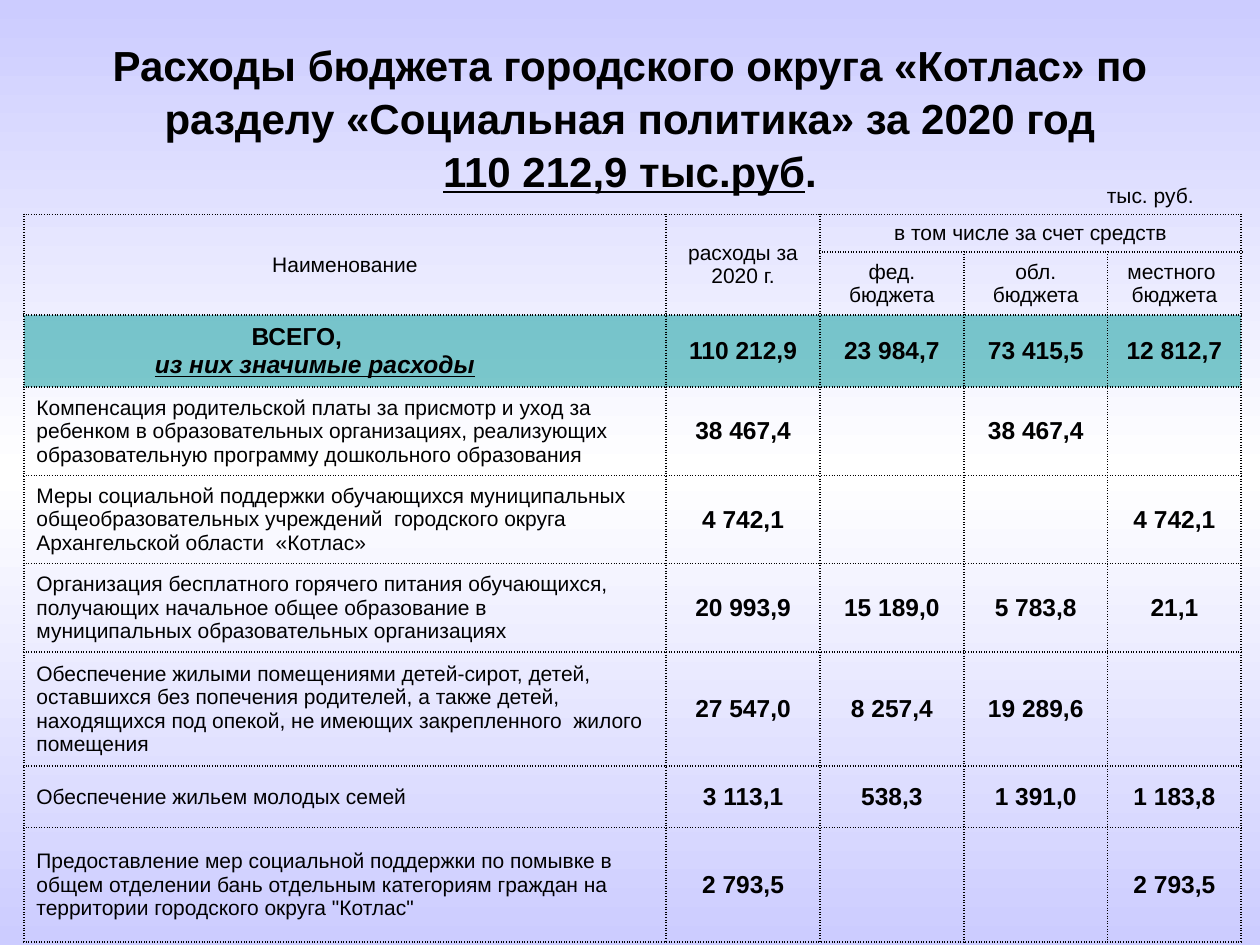
from lxml import etree
from pptx import Presentation
from pptx.dml.color import RGBColor
from pptx.enum import text
from pptx.oxml.ns import qn
from pptx.util import Cm, Pt

THEME = {
    "font": "Arial", "ink": "000000", "total": "009999", "alpha": 50,
    "sky": [(0, "CCCCFF"), (50, "FFFFFF"), (100, "CCCCFF")],
    "head": {"size": Pt(24), "bold": True},
    "body": {"size": Pt(12), "bold": False},
    "sum": {"size": Pt(14), "bold": True},
    "line": Pt(1), "dash": "sysDot",
}
LEFT, MID = text.PP_ALIGN.LEFT, text.PP_ALIGN.CENTER
ROLE = {"underline": {"underline": True},
        "stress": {"underline": True, "italic": True}}

TITLE = [[("Расходы бюджета городского округа «Котлас» по разделу "
           "«Социальная политика» за 2020 год\v", None),
          ("110 212,9 тыс.руб", "underline"), (".", None)]]
UNIT = [[("тыс. руб.", None)]]
HEAD = [
    ["Наименование", "расходы за 2020 г.", "в том числе за счет средств", "", ""],
    ["", "", "фед. бюджета", "обл.\nбюджета", "местного  бюджета"],
]
SPANS = [(0, 0, 1, 0), (0, 1, 1, 1), (0, 2, 0, 4)]
TOTAL = [[("ВСЕГО,", None)], [("из них значимые расходы", "stress")]]
SHIFT = [{"marR": Cm(1.94)}, {"marL": Cm(0.73)}]
SUMS = ["110 212,9", "23 984,7", "73 415,5", "12 812,7"]
ROWS = [
    ("Компенсация родительской платы за присмотр и уход за ребенком в "
     "образовательных организациях, реализующих образовательную программу "
     "дошкольного образования", "38 467,4", "", "38 467,4", ""),
    ("Меры социальной поддержки обучающихся муниципальных общеобразовательных "
     "учреждений  городского округа Архангельской области  «Котлас»",
     "4 742,1", "", "", "4 742,1"),
    ("Организация бесплатного горячего питания обучающихся, получающих "
     "начальное общее образование в  муниципальных образовательных организациях",
     "20 993,9", "15 189,0", "5 783,8", "21,1"),
    ("Обеспечение жилыми помещениями детей-сирот, детей, оставшихся без "
     "попечения родителей, а также детей, находящихся под опекой, не имеющих "
     "закрепленного  жилого помещения", "27 547,0", "8 257,4", "19 289,6", ""),
    ("Обеспечение жильем молодых семей", "3 113,1", "538,3", "1 391,0", "1 183,8"),
    ("Предоставление мер социальной поддержки по помывке в общем отделении бань "
     "отдельным категориям граждан на территории городского округа \"Котлас\"",
     "2 793,5", "", "", "2 793,5"),
]
WIDTHS = [12.95, 3.1, 2.9, 2.9, 2.69]
HEIGHTS = [0.76, 1.27, 1.45, 1.78, 1.67, 1.67, 2.3, 1.24, 2.31]


def apply(item, style):
    for name, value in style.items():
        setattr(item, name, value)


def plain(words):
    return [[(line, None)] for line in words.split("\n")]


def write(frame, paras, style, align=MID, gap=None):
    for i, runs in enumerate(paras):
        para = frame.paragraphs[0] if i == 0 else frame.add_paragraph()
        apply(para, {"alignment": align, "line_spacing": gap})
        apply(para.font, style)
        for words, role in runs:
            for j, part in enumerate(words.split("\v")):
                if j:
                    para.add_line_break()
                if not part:
                    continue
                run = para.add_run()
                run.text = part
                apply(run.font, {"name": THEME["font"], **style, **ROLE.get(role, {})})
                run.font.color.rgb = RGBColor.from_string(THEME["ink"])


def label(slide, place, paras, style, gap=None):
    frame = slide.shapes.add_textbox(*map(Cm, place)).text_frame
    apply(frame, {"word_wrap": True, "vertical_anchor": text.MSO_ANCHOR.MIDDLE})
    write(frame, paras, style, gap=gap)


def tag(host, name, **attrs):
    return etree.SubElement(host, qn("a:" + name), {k: str(v) for k, v in attrs.items()})


def frame_cell(cell):
    props = cell._tc.get_or_add_tcPr()
    for i, side in enumerate("LRTB"):
        line = tag(props, "ln" + side, w=int(THEME["line"]))
        tag(tag(line, "solidFill"), "srgbClr", val=THEME["ink"])
        tag(line, "prstDash", val=THEME["dash"])
        props.insert(i, line)


def paint(cell, hue):
    if not hue:
        cell.fill.background()
        return
    cell.fill.solid()
    cell.fill.fore_color.rgb = RGBColor.from_string(hue)
    color = cell._tc.tcPr.find(qn("a:solidFill")).find(qn("a:srgbClr"))
    tag(color, "alpha", val=THEME["alpha"] * 1000)


def shade(slide):
    fill = slide.background.fill
    fill.gradient()
    fill.gradient_angle = 270
    stops = next(slide.element.iter(qn("a:gsLst")))
    for stop in list(stops):
        stops.remove(stop)
    for pos, hue in THEME["sky"]:
        tag(tag(stops, "gs", pos=pos * 1000), "srgbClr", val=hue)


def grid(slide):
    cells = [[plain(words) for words in row] for row in HEAD]
    cells.append([TOTAL] + [plain(words) for words in SUMS])
    cells += [[plain(words) for words in row] for row in ROWS]
    size = (Cm(0.48), Cm(4.32), Cm(sum(WIDTHS)), Cm(sum(HEIGHTS)))
    table = slide.shapes.add_table(len(cells), len(WIDTHS), *size).table
    apply(table, {"first_row": False, "horz_banding": False})
    for col, wide in zip(table.columns, WIDTHS):
        col.width = Cm(wide)
    for row, high in zip(table.rows, HEIGHTS):
        row.height = Cm(high)
    top = len(HEAD)
    for r, row in enumerate(cells):
        for c, paras in enumerate(row):
            cell = table.cell(r, c)
            cell.vertical_anchor = text.MSO_ANCHOR.MIDDLE
            bold = r == top or (r > top and c > 0)
            align = LEFT if r > top and c == 0 else MID
            write(cell.text_frame, paras, THEME["sum" if bold else "body"], align)
            paint(cell, THEME["total"] if r == top else None)
            frame_cell(cell)
    for para, marks in zip(table.cell(top, 0).text_frame.paragraphs, SHIFT):
        for name, value in marks.items():
            para._p.get_or_add_pPr().set(name, str(int(value)))
    for r, c, low, far in SPANS:
        table.cell(r, c).merge(table.cell(low, far))


def main():
    deck = Presentation()
    apply(deck, {"slide_width": Cm(25.4), "slide_height": Cm(19.05)})
    slide = deck.slides.add_slide(deck.slide_layouts[6])
    shade(slide)
    label(slide, (1.27, 0.76, 22.86, 3.18), TITLE, THEME["head"], 1.05)
    grid(slide)
    label(slide, (21.49, 3.43, 3.4, 0.99), UNIT, THEME["body"])
    deck.save("out.pptx")


if __name__ == "__main__":
    main()
